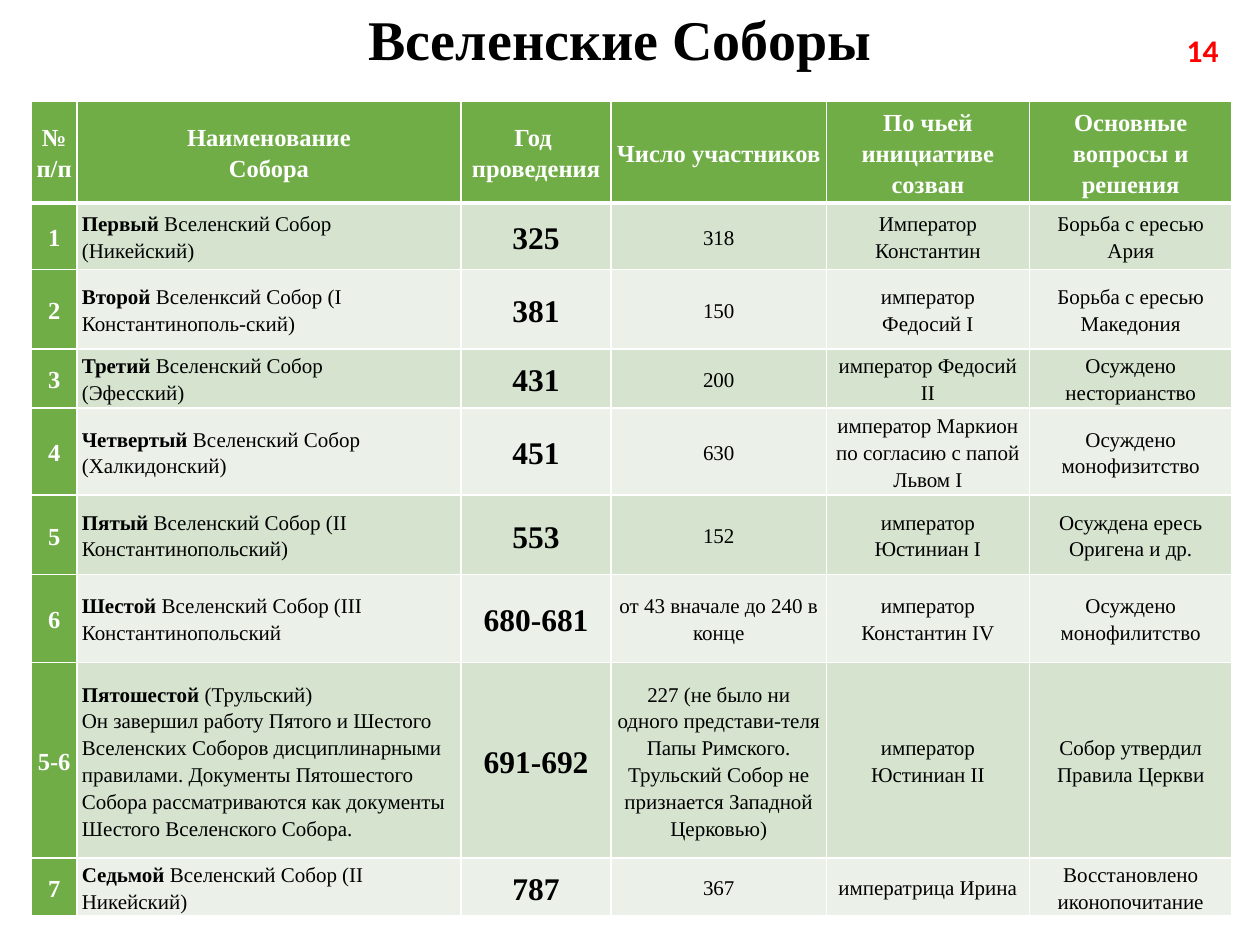
"""Build a slide with a table of the Ecumenical Councils."""
import dataclasses
import typing

import lxml.etree
import pptx
import pptx.dml.color
import pptx.enum.text
import pptx.oxml.ns
import pptx.util

Inches = pptx.util.Inches
Pt = pptx.util.Pt
Align = pptx.enum.text.PP_ALIGN
Middle = pptx.enum.text.MSO_ANCHOR.MIDDLE


@dataclasses.dataclass(frozen=True)
class Theme:
    """Colours, fonts and type sizes."""
    green: str = "70AD47"
    dark: str = "D5E3CF"
    light: str = "EBF1E9"
    white: str = "FFFFFF"
    black: str = "000000"
    red: str = "FF0000"
    serif: str = "Times New Roman"
    sans: str = "Calibri"
    title: int = 32
    year: int = 18
    head: int = 14
    body: int = 12


@dataclasses.dataclass(frozen=True)
class Style:
    """Format of a piece of text; lead marks the length of a bold start."""
    size: int
    color: str
    bold: bool = False
    font: str = "Times New Roman"
    align: Align = Align.CENTER
    lines: float = 1.15


class Council(typing.NamedTuple):
    """One row of the table."""
    number: str
    lead: str
    name: str
    year: str
    people: str
    caller: str
    result: str


THEME = Theme()
HEAD = Style(THEME.head, THEME.white, True)
BODY = Style(THEME.body, THEME.black)
NAME = dataclasses.replace(BODY, align=Align.LEFT)
YEAR = Style(THEME.year, THEME.black, True)
TITLE = Style(THEME.title, THEME.black, True, lines=0.9)
PAGE = Style(THEME.year, THEME.red, True, THEME.sans, Align.RIGHT, 1.0)

COLS = (0.36, 3.05, 1.19, 1.71, 1.61, 1.61)
ROWS = (0.81, 0.53, 0.63, 0.47, 0.69, 0.63, 0.7, 1.55, 0.45)
HEADS = ("№ п/п", "Наименование\nСобора", "Год |проведения", "Число участников",
         "По чьей\nинициативе\nсозван", "Основные вопросы и решения")
COUNCILS = (
    Council("1", "Первый", " Вселенский Собор\n(Никейский)", "325", "318",
            "Император Константин", "Борьба с ересью Ария"),
    Council("2", "Второй ", "Вселенксий Собор (I Константинополь-ский)", "381", "150",
            "император\nФедосий I", "Борьба с ересью Македония"),
    Council("3", "Третий", " Вселенский Собор\n(Эфесский)", "431", "200",
            "император Федосий II", "Осуждено несторианство"),
    Council("4", "Четвертый", " Вселенский Собор (Халкидонский)", "451", "630",
            "император Маркион по согласию с папой Львом I", "Осуждено монофизитство"),
    Council("5", "Пятый", " Вселенский Собор (II Константинопольский)", "553", "152",
            "император Юстиниан I", "Осуждена ересь Оригена и др."),
    Council("6", "Шестой", " Вселенский Собор (III Константинопольский", "680-681",
            "от 43 вначале до 240 в конце", "император\nКонстантин IV",
            "Осуждено монофилитство"),
    Council("5-6", "Пятошестой", " (Трульский)\nОн завершил работу Пятого и Шестого "
            "Вселенских Соборов дисциплинарными правилами. Документы Пятошестого Собора "
            "рассматриваются как документы Шестого Вселенского Собора.", "691-692",
            "227 (не было ни одного представи-теля Папы Римского. Трульский Собор не "
            "признается Западной Церковью)", "император Юстиниан II",
            "Собор утвердил Правила Церкви"),
    Council("7", "Седьмой", " Вселенский Собор (II Никейский)", "787", "367",
            "императрица Ирина", "Восстановлено иконопочитание"),
)


def apply(target: typing.Any, values: dict[str, typing.Any]) -> None:
    """Set each named value on the target."""
    for name, value in values.items():
        setattr(target, name, value)


def add_run(para: typing.Any, text: str, style: Style) -> None:
    """Add a run in the given style."""
    run = para.add_run()
    run.text = text
    apply(run.font, {"size": Pt(style.size), "bold": style.bold, "name": style.font})
    run.font.color.rgb = pptx.dml.color.RGBColor.from_string(style.color)


def write(frame: typing.Any, text: str, style: Style, lead: str = "") -> None:
    """Write paragraphs split at newlines, with line breaks at bars."""
    for row, line in enumerate(text.split("\n")):
        para = frame.add_paragraph() if row else frame.paragraphs[0]
        apply(para, {"alignment": style.align, "line_spacing": style.lines})
        if lead and not row:
            add_run(para, lead, dataclasses.replace(style, bold=True))
        for part, piece in enumerate(line.split("|")):
            if part:
                para.add_line_break()
            add_run(para, piece, style)


def add_text(slide: typing.Any, box: tuple[float, ...], text: str, style: Style) -> None:
    """Add a text box."""
    frame = slide.shapes.add_textbox(*map(Inches, box)).text_frame
    apply(frame, {"word_wrap": True, "vertical_anchor": Middle})
    write(frame, text, style)


def add_edge(cell: typing.Any, side: str, width: int) -> None:
    """Draw one white border of a cell."""
    qn = pptx.oxml.ns.qn
    line = lxml.etree.SubElement(cell._tc.get_or_add_tcPr(), qn(f"a:ln{side}"), w=str(Pt(width)))
    fill = lxml.etree.SubElement(line, qn("a:solidFill"))
    lxml.etree.SubElement(fill, qn("a:srgbClr"), val=THEME.white)


def fill_cell(cell: typing.Any, text: str, style: Style, color: str,
              top: int = 1, base: int = 1, lead: str = "") -> None:
    """Format a cell and write its text."""
    apply(cell, {"margin_left": Inches(0.04), "margin_right": Inches(0.04),
                 "margin_top": 0, "margin_bottom": 0, "vertical_anchor": Middle})
    for side, width in {"L": 1, "R": 1, "T": top, "B": base}.items():
        add_edge(cell, side, width)
    cell.fill.solid()
    cell.fill.fore_color.rgb = pptx.dml.color.RGBColor.from_string(color)
    write(cell.text_frame, text, style, lead)


def add_grid(slide: typing.Any) -> None:
    """Add the table of councils."""
    box = map(Inches, (0.25, 0.8, sum(COLS), sum(ROWS)))
    table = slide.shapes.add_table(len(ROWS), len(COLS), *box).table
    table.horz_banding = False
    for col, width in zip(table.columns, COLS):
        col.width = Inches(width)
    for row, height in zip(table.rows, ROWS):
        row.height = Inches(height)
    for col, text in enumerate(HEADS):
        fill_cell(table.cell(0, col), text, HEAD, THEME.green, base=3)
    styles = (HEAD, NAME, YEAR, BODY, BODY, BODY)
    for row, item in enumerate(COUNCILS, 1):
        band = THEME.dark if row % 2 else THEME.light
        texts = (item.number, item.name, *item[3:])
        for col, (text, style) in enumerate(zip(texts, styles)):
            fill_cell(table.cell(row, col), text, style, band if col else THEME.green,
                      top=3 if row == 1 else 1, lead=item.lead if col == 1 else "")


def main() -> None:
    """Build and save the slide."""
    deck = pptx.Presentation()
    apply(deck, {"slide_width": Inches(10), "slide_height": Inches(7.5)})
    slide = deck.slides.add_slide(deck.slide_layouts[6])
    add_text(slide, (0.61, 0.04, 8.62, 0.6), "Вселенские Соборы", TITLE)
    add_text(slide, (9.24, 0.2, 0.53, 0.4), "14", PAGE)
    add_grid(slide)
    deck.save("out.pptx")


if __name__ == "__main__":
    main()
